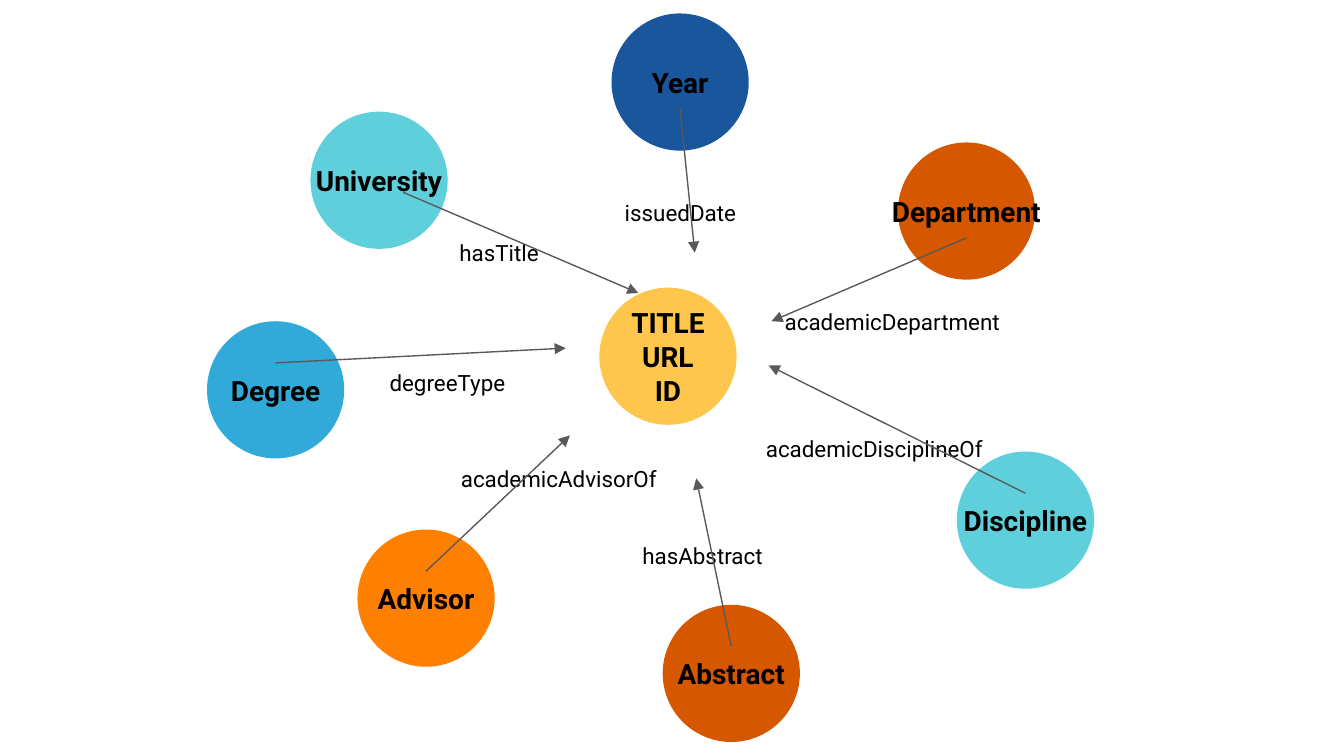
from collections import namedtuple

from lxml.etree import SubElement
from pptx import Presentation
from pptx.dml.color import RGBColor
from pptx.enum.shapes import MSO_CONNECTOR as Connector, MSO_SHAPE as Shape
from pptx.enum.text import MSO_ANCHOR as Anchor, PP_ALIGN as Align
from pptx.oxml.ns import qn
from pptx.util import Pt

BLACK = RGBColor(0x00, 0x00, 0x00)
GRAY = RGBColor(0x59, 0x59, 0x59)
RUST = RGBColor(0xD5, 0x58, 0x00)
SKY = RGBColor(0x32, 0xAA, 0xD9)
NAVY = RGBColor(0x1A, 0x56, 0x9C)
YELLOW = RGBColor(0xFF, 0xC6, 0x4E)
ORANGE = RGBColor(0xFF, 0x80, 0x01)
TURQUOISE = RGBColor(0x5F, 0xD0, 0xDB)

DIAMETER = 73.5
NAME_SIZE = (155.5, 28.8)
RELATION_SIZE = (133.2, 28.8)
NAME_FONT = {"name": "Roboto", "size": Pt(15), "bold": True}
RELATION_FONT = {"name": "Roboto", "size": Pt(12), "bold": False}

ABOVE, BELOW, BESIDE = (0, -14.4), (0, 14.4), (13, 6.5)

Entity = namedtuple("Entity", "name color corner relation relation_corner start_offset tip")
HUB = ("TITLE\nURL\nID", YELLOW, (321.1, 154.1))
ENTITIES = [
    Entity("Abstract", RUST, (355, 324), "hasAbstract", (337, 283), ABOVE, (373, 256.3)),
    Entity("Degree", SKY, (110.9, 172.1), "degreeType", (201.6, 190.8), ABOVE, (303.1, 186.5)),
    Entity("Year", NAVY, (327.6, 7.2), "issuedDate", (327.6, 99.4), BELOW, (372.2, 135.4)),
    Entity("Advisor", ORANGE, (191.5, 283.7), "academicAdvisorOf", (239.8, 241.9), ABOVE, (305.3, 233.3)),
    Entity("Discipline", TURQUOISE, (512.6, 241.9), "academicDisciplineOf", (403.2, 226.1), ABOVE, (411.8, 195.8)),
    Entity("University", TURQUOISE, (166.3, 59.8), "hasTitle", (239, 121), BESIDE, (342, 157)),
    Entity("Department", RUST, (481, 76.3), "academicDepartment", (413.3, 157.7), BELOW, (413.3, 172.1)),
]


def add_label(slide, wording, box, font, inset, align, anchor):
    """Place text in the box (left, top, width, height)."""
    frame = slide.shapes.add_textbox(*map(Pt, box)).text_frame
    layout = {"word_wrap": True, "vertical_anchor": anchor}
    layout.update({f"margin_{side}": Pt(inset) for side in ("left", "top", "right", "bottom")})
    for attribute, value in layout.items():
        setattr(frame, attribute, value)
    frame.text = wording
    for paragraph in frame.paragraphs:
        paragraph.alignment = align
        for attribute, value in font.items():
            setattr(paragraph.font, attribute, value)
        paragraph.font.color.rgb = BLACK


def add_node(slide, name, color, corner):
    """Place a circle at the corner with its name centred over it."""
    circle = slide.shapes.add_shape(
        Shape.ROUNDED_RECTANGLE, *map(Pt, corner), Pt(DIAMETER), Pt(DIAMETER))
    circle.adjustments[0] = 0.5
    circle.shadow.inherit = False
    circle.fill.solid()
    circle.fill.fore_color.rgb = color
    circle.line.fill.background()
    left, top = (edge + (DIAMETER - extent) / 2 for edge, extent in zip(corner, NAME_SIZE))
    add_label(slide, name, (left, top, *NAME_SIZE), NAME_FONT, 0, Align.CENTER, Anchor.MIDDLE)


def add_arrow(slide, start, tip):
    """Draw a thin arrow from start to tip."""
    arrow = slide.shapes.add_connector(Connector.STRAIGHT, *map(Pt, (*start, *tip)))
    arrow.line.color.rgb = GRAY
    arrow.line.width = Pt(0.75)
    SubElement(arrow.line._get_or_add_ln(), qn("a:tailEnd"), type="triangle")
    SubElement(arrow._element.spPr, qn("a:effectLst"))


def build_graph(slide):
    """Draw the hub, its entities and the relations between them."""
    add_node(slide, *HUB)
    for entity in ENTITIES:
        add_node(slide, entity.name, entity.color, entity.corner)
    for entity in ENTITIES:
        add_label(slide, entity.relation, (*entity.relation_corner, *RELATION_SIZE),
                  RELATION_FONT, 7.2, Align.LEFT, Anchor.TOP)
    for entity in ENTITIES:
        start = [edge + DIAMETER / 2 + shift
                 for edge, shift in zip(entity.corner, entity.start_offset)]
        add_arrow(slide, start, entity.tip)


def main():
    """Build and save the presentation."""
    deck = Presentation()
    deck.slide_width, deck.slide_height = Pt(720), Pt(405)
    build_graph(deck.slides.add_slide(deck.slide_layouts[6]))
    deck.save("out.pptx")


if __name__ == "__main__":
    main()
